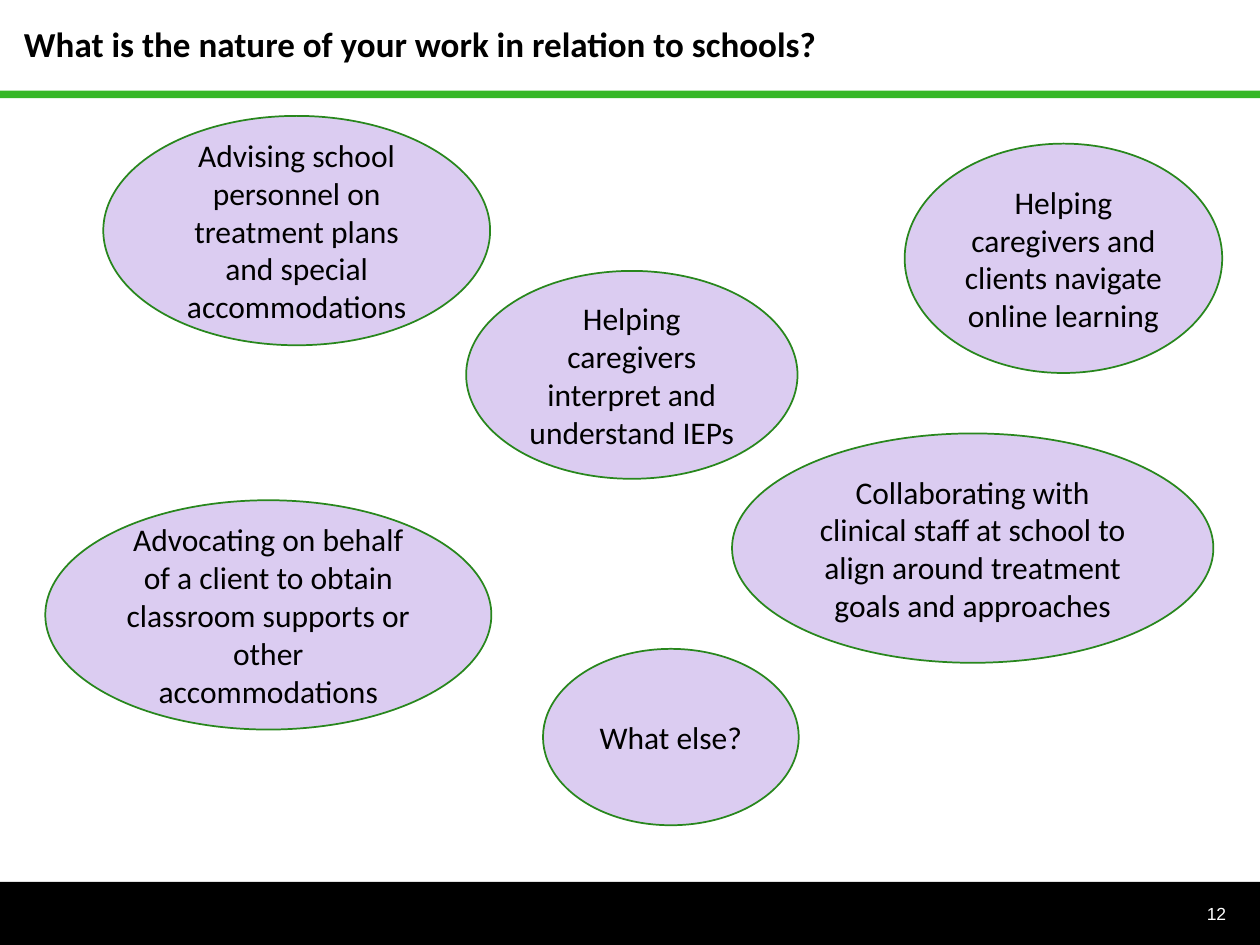
from pptx import Presentation
from pptx import util as u
from pptx.dml import color
from pptx.enum import shapes, text


def paint(value):
    return color.RGBColor.from_string(value)


class SlideBuilder:
    black = "000000"
    white = "FFFFFF"
    green = "36B727"
    outline = "28871D"
    lilac = "DBCCF1"
    title_font = {"name": "Calibri", "size": u.Pt(20), "bold": True}
    bubble_font = {"name": "Calibri", "size": u.Pt(18), "bold": False}
    number_font = {"name": "Arial", "size": u.Pt(10), "bold": False}

    def __init__(self, page):
        self.page = page

    def set_words(self, box, words, font, ink, align, spacing=1.0):
        frame = box.text_frame
        frame.word_wrap = True
        frame.auto_size = text.MSO_AUTO_SIZE.NONE
        frame.vertical_anchor = text.MSO_ANCHOR.MIDDLE
        para = frame.paragraphs[0]
        para.alignment = align
        para.line_spacing = spacing
        span = para.add_run()
        span.text = words
        for name, value in font.items():
            setattr(span.font, name, value)
        span.font.color.rgb = paint(ink)

    def shape(self, kind, place, fill):
        box = self.page.shapes.add_shape(kind, *map(u.Inches, place))
        box.shadow.inherit = False
        box.fill.solid()
        box.fill.fore_color.rgb = paint(fill)
        return box

    def band(self, place, fill):
        box = self.shape(shapes.MSO_SHAPE.RECTANGLE, place, fill)
        box.line.fill.background()

    def bubble(self, place, words):
        box = self.shape(shapes.MSO_SHAPE.OVAL, place, self.lilac)
        box.line.color.rgb = paint(self.outline)
        box.line.width = u.Pt(1)
        self.set_words(box, words, self.bubble_font, self.black, text.PP_ALIGN.CENTER)

    def title(self, place, words):
        box = self.page.shapes.title
        for name, value in zip(("left", "top", "width", "height"), place):
            setattr(box, name, u.Inches(value))
        self.set_words(box, words, self.title_font, self.black, text.PP_ALIGN.LEFT, 0.9)

    def number(self, place, words):
        box = self.page.shapes.add_textbox(*map(u.Inches, place))
        self.set_words(box, words, self.number_font, self.white, text.PP_ALIGN.RIGHT)


def main():
    deck = Presentation()
    deck.slide_width, deck.slide_height = u.Inches(10), u.Inches(7.5)
    builder = SlideBuilder(deck.slides.add_slide(deck.slide_layouts[5]))

    builder.band((0, 7, 10, 0.5), builder.black)
    builder.band((0, 0.72, 10, 0.06), builder.green)
    builder.title((0.09, 0.13, 9.75, 0.48), "What is the nature of your work in relation to schools?")
    builder.number((9.41, 7.05, 0.42, 0.4), "12")

    activities = [
        ((0.82, 0.92, 3.07, 1.82), "Advising school personnel on treatment plans and special accommodations"),
        ((3.7, 2.15, 2.63, 1.65), "Helping caregivers interpret and understand IEPs"),
        ((5.81, 3.44, 3.82, 1.82), "Collaborating with clinical staff at school to align around treatment goals and approaches"),
        ((0.36, 3.97, 3.54, 1.82), "Advocating on behalf of a client to obtain classroom supports or other accommodations"),
        ((7.18, 1.14, 2.52, 1.82), "Helping caregivers and clients navigate online learning"),
        ((4.31, 5.15, 2.03, 1.4), "What else?"),
    ]
    for place, words in activities:
        builder.bubble(place, words)

    deck.save("out.pptx")


if __name__ == "__main__":
    main()
